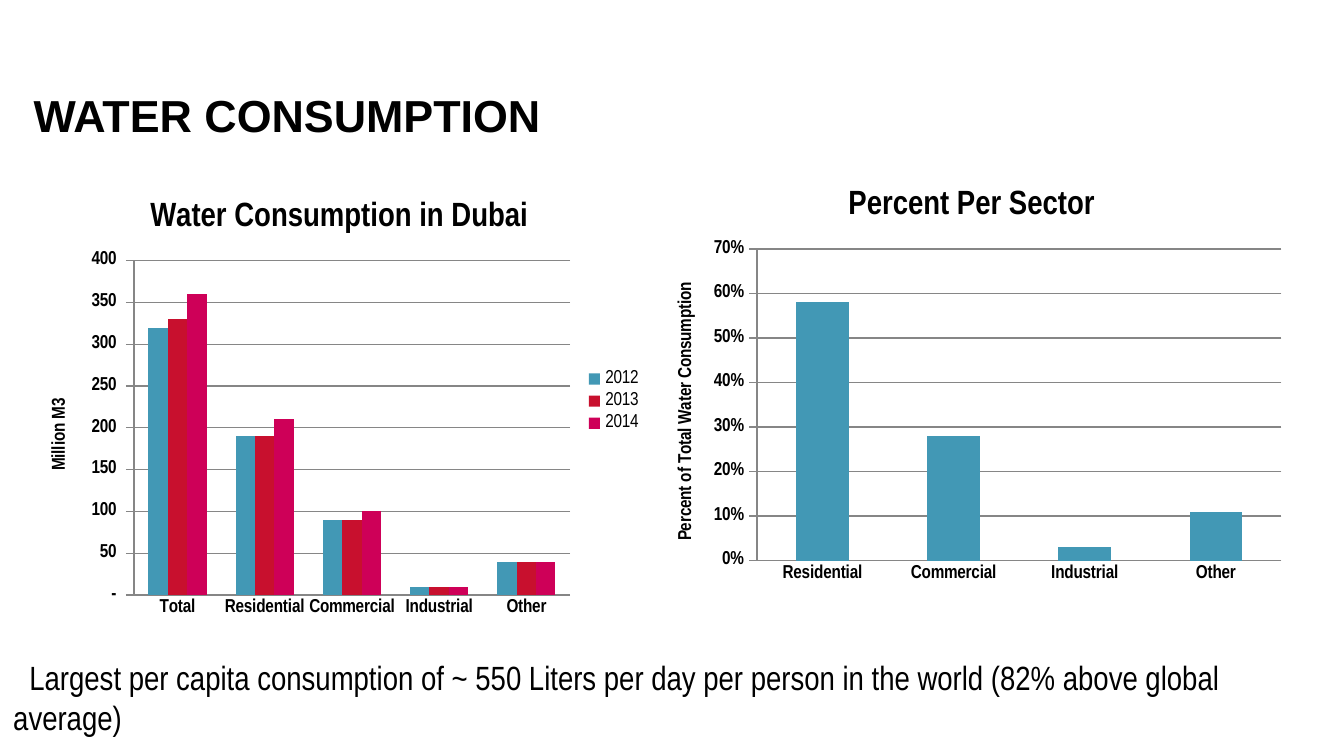
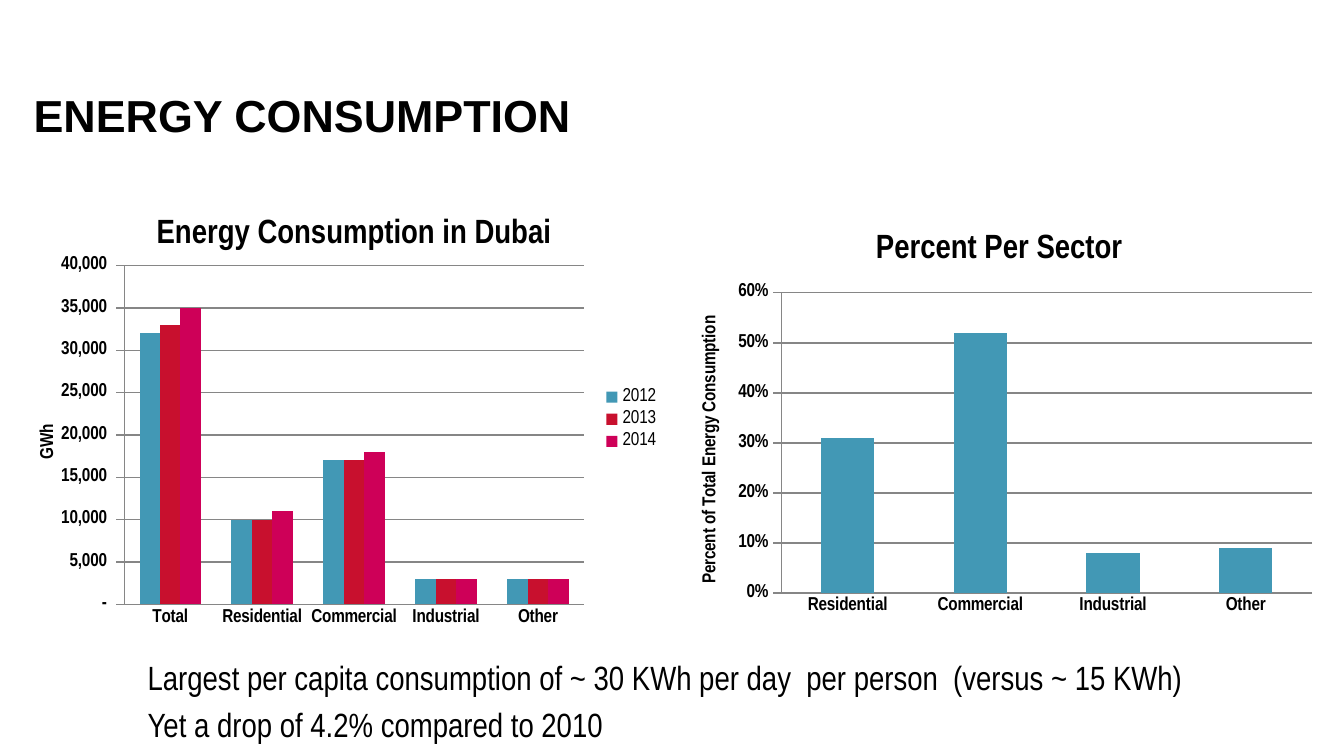
from dataclasses import dataclass

from lxml import etree
from pptx import Presentation
from pptx.chart.data import CategoryChartData
from pptx.dml.color import RGBColor
from pptx.enum import chart as kinds, text
from pptx.util import Inches, Pt


@dataclass(frozen=True)
class Theme:
    ink: str = "000000"
    grid: str = "868686"
    bars: tuple = ("4298B5", "C8102E", "CE0058")
    head: str = "Arial"
    body: str = "Arial Narrow"
    title: int = 24
    note: int = 18
    label: int = 10


SECTORS = ["Residential", "Commercial", "Industrial", "Other"]
YEARS = ["2012", "2013", "2014"]
COUNT = '_(* #,##0_);_(* \\(#,##0\\);_(* "-"_);_(@_)'


class Deck:
    def __init__(self, theme):
        self.theme = theme
        self.file = Presentation()
        self.file.slide_width = Inches(10)
        self.file.slide_height = Inches(10) * 9 // 16
        self.slide = None

    def style(self, font, size, bold=False, name=None):
        font.name = name or self.theme.body
        font.size = Pt(size)
        font.bold = bold
        font.color.rgb = RGBColor.from_string(self.theme.ink)

    def box(self, left, top, width, height):
        area = [Inches(n) for n in (left, top, width, height)]
        frame = self.slide.shapes.add_textbox(*area).text_frame
        frame.word_wrap = True
        return frame

    def page(self, title):
        self.slide = self.file.slides.add_slide(self.file.slide_layouts[6])
        frame = self.box(0, 0.15, 5.42, 0.95)
        frame.vertical_anchor = text.MSO_ANCHOR.BOTTOM
        frame.margin_left = frame.margin_right = Inches(0.25)
        para = frame.paragraphs[0]
        para.text = title
        para.line_spacing = Pt(26)
        self.style(para.font, self.theme.title, True, self.theme.head)

    def note(self, lines, left=0, first=0):
        frame = self.box(0, 4.84, 10.02, 0.63)
        for i, line in enumerate(lines):
            para = frame.add_paragraph() if i else frame.paragraphs[0]
            para.text = line
            para.space_before = Pt(3.6 if i else 0)
            self.style(para.font, self.theme.note)
            props = para._p.get_or_add_pPr()
            props.set("marL", str(Inches(left)))
            props.set("indent", str(Inches(first)))

    def label(self, owner, words, size):
        owner.has_title = True
        frame = (owner.chart_title if hasattr(owner, "chart_title")
                 else owner.axis_title).text_frame
        frame.text = words
        self.style(frame.paragraphs[0].font, size, True)

    def line(self, form):
        form.line.color.rgb = RGBColor.from_string(self.theme.grid)
        form.line.width = Pt(0.75)

    def chart(self, area, title, unit, cats, series, top, step, code, plot=None):
        data = CategoryChartData(number_format=code)
        data.categories = cats
        for name, vals in series.items():
            data.add_series(name, vals)
        chart = self.slide.shapes.add_chart(
            kinds.XL_CHART_TYPE.COLUMN_CLUSTERED,
            *[Inches(n) for n in area], data).chart
        self.style(chart.font, self.theme.label)
        self.label(chart, title, self.theme.note)

        # Bars
        bars = chart.plots[0]
        bars.gap_width = 150
        bars.vary_by_categories = False
        for item, color in zip(bars.series, self.theme.bars):
            item.format.fill.solid()
            item.format.fill.fore_color.rgb = RGBColor.from_string(color)

        # Axes
        cat, val = chart.category_axis, chart.value_axis
        cat.major_tick_mark = kinds.XL_TICK_MARK.NONE
        val.major_tick_mark = kinds.XL_TICK_MARK.OUTSIDE
        for axis in (cat, val):
            self.style(axis.tick_labels.font, self.theme.label, True)
            self.line(axis.format)
        val.minimum_scale, val.maximum_scale, val.major_unit = 0, top, step
        val.tick_labels.number_format = code
        val.tick_labels.number_format_is_linked = False
        val.has_major_gridlines = True
        self.line(val.major_gridlines.format)
        self.label(val, unit, self.theme.label)

        # Legend and plot place
        chart.has_legend = len(series) > 1
        if chart.has_legend:
            chart.legend.position = kinds.XL_LEGEND_POSITION.RIGHT
            chart.legend.include_in_layout = False
            self.style(chart.legend.font, self.theme.label)
        if plot:
            self.place(chart, plot)

    def place(self, chart, plot):
        area = chart._chartSpace.chart.plotArea
        space = "{%s}" % area.nsmap["c"]
        for old in area.findall(space + "layout"):
            area.remove(old)
        layout = etree.Element(space + "layout")
        area.insert(0, layout)
        manual = etree.SubElement(layout, space + "manualLayout")
        parts = dict(layoutTarget="inner", xMode="edge", yMode="edge")
        parts.update(zip("xywh", plot))
        for tag, value in parts.items():
            etree.SubElement(manual, space + tag).set("val", str(value))

    def years(self, area, title, unit, rows, top, step, plot=None):
        self.chart(area, title, unit, ["Total"] + SECTORS,
                   dict(zip(YEARS, rows)), top, step, COUNT, plot)

    def share(self, area, kind, vals, top):
        self.chart(area, "Percent Per Sector",
                   f"Percent of Total {kind} Consumption", SECTORS,
                   {"Series 1": vals}, top, 0.1, "0%")


def main():
    deck = Deck(Theme())

    # Water
    deck.page("WATER CONSUMPTION")
    deck.years((0.17, 1.31, 4.71, 3.35), "Water Consumption in Dubai",
               "Million M3",
               [(320, 190, 90, 10, 40),
                (330, 190, 90, 10, 40),
                (360, 210, 100, 10, 40)], 400, 50)
    deck.share((4.83, 1.23, 4.8, 3.17), "Water", (0.58, 0.28, 0.03, 0.11), 0.7)
    deck.note(["Largest per capita consumption of ~ 550 Liters per day per "
               "person in the world (82% above global  average)"], first=0.12)

    # Energy
    deck.page("ENERGY CONSUMPTION")
    deck.note(["Largest per capita consumption of ~ 30 KWh per day  per person"
               "  (versus ~ 15 KWh)",
               "Yet a drop of 4.2% compared to 2010"], left=1)
    deck.years((0.26, 1.44, 4.75, 3.36), "Energy Consumption in Dubai", "GWh",
               [(32000, 10000, 17000, 3000, 3000),
                (33000, 10000, 17000, 3000, 3000),
                (35000, 11000, 18000, 3000, 3000)], 40000, 5000,
               (0.14, 0.16, 0.72, 0.75))
    deck.share((5.01, 1.56, 4.85, 3.08), "Energy", (0.31, 0.52, 0.08, 0.09), 0.6)

    deck.file.save("out.pptx")


if __name__ == "__main__":
    main()
